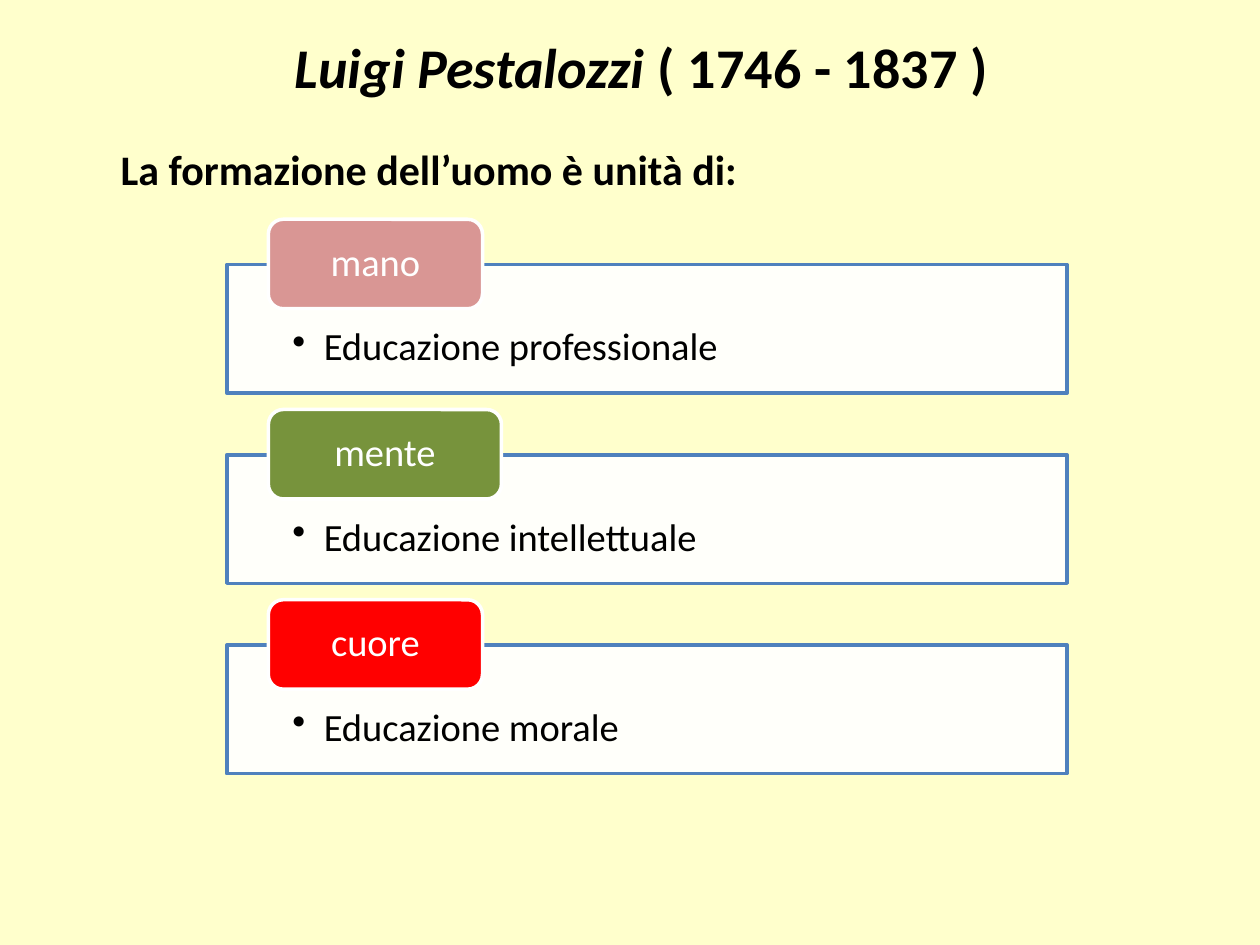
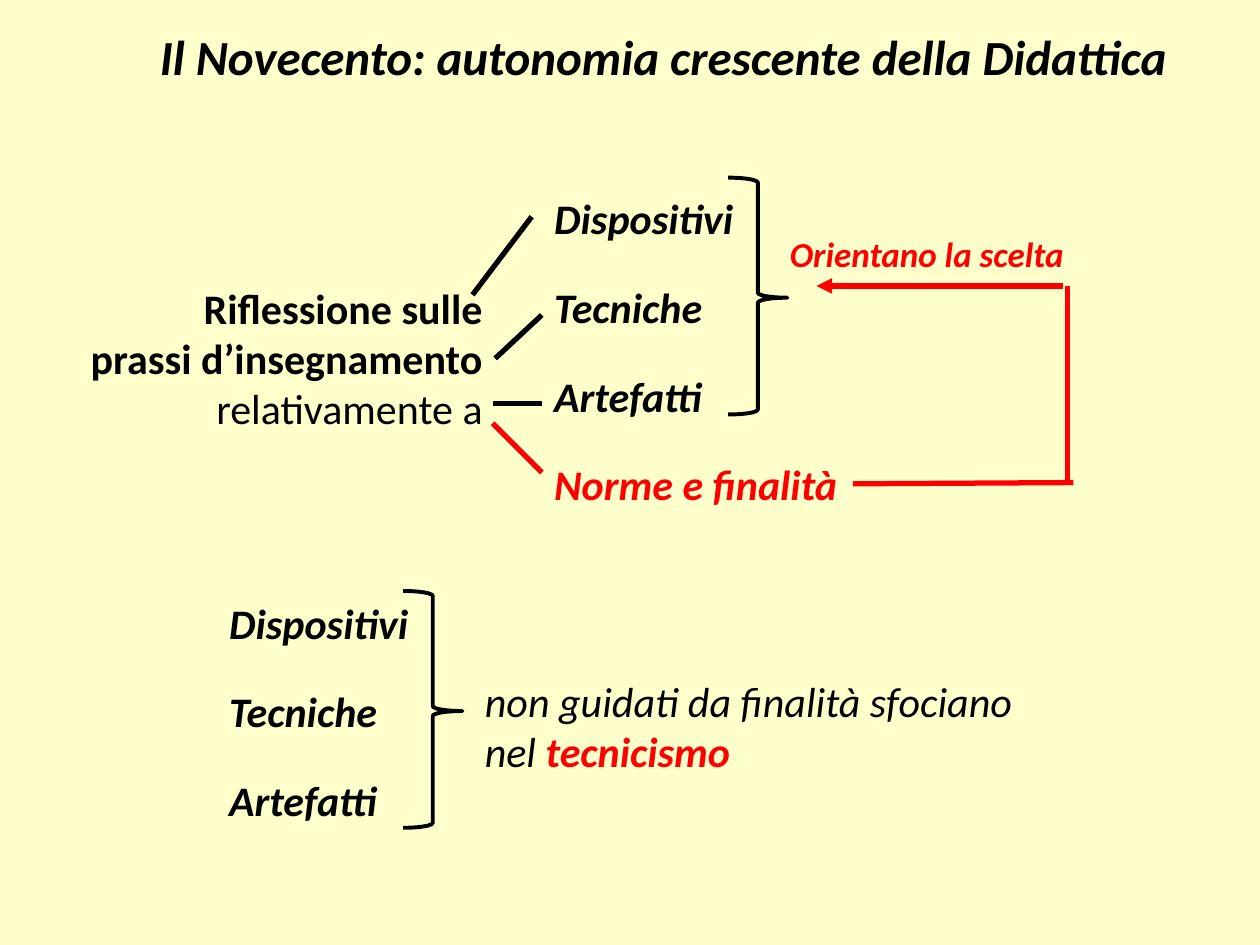
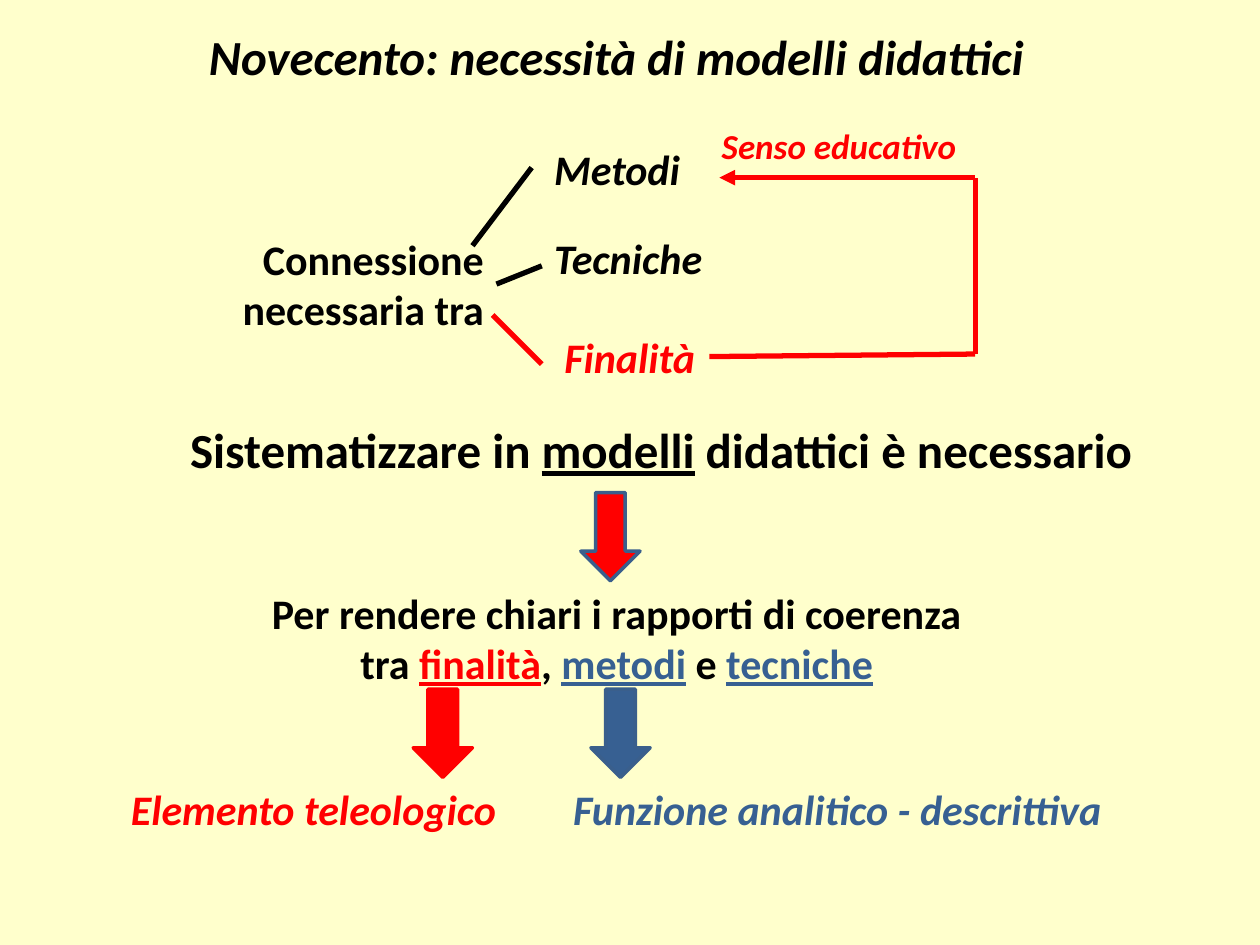
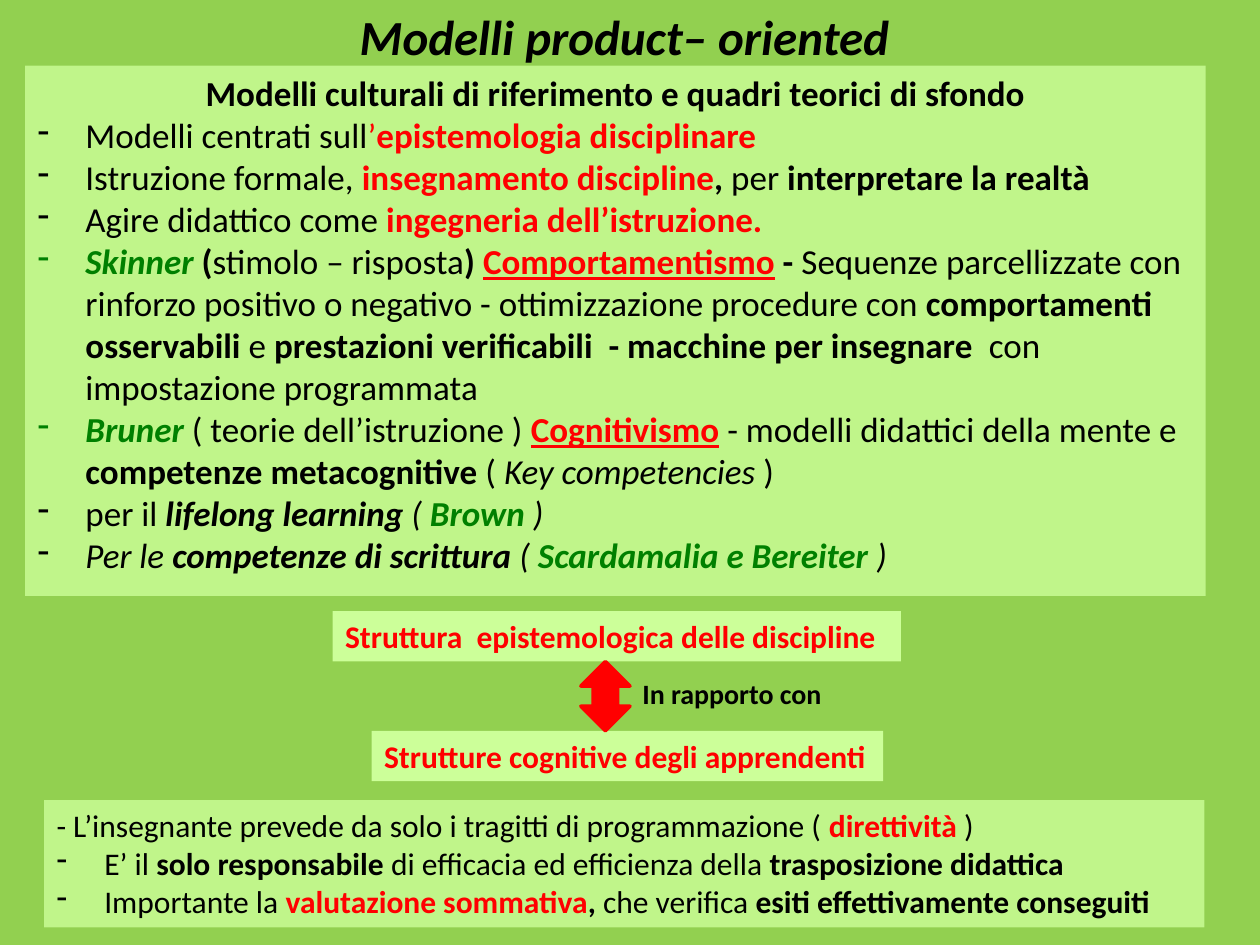
"""Build four slides on the history of didactics and its product-oriented models."""

from dataclasses import dataclass
from typing import NamedTuple

from lxml.etree import SubElement
from pptx import Presentation
from pptx.dml.color import RGBColor
from pptx.enum.shapes import MSO_CONNECTOR, MSO_SHAPE
from pptx.enum.text import MSO_ANCHOR, MSO_AUTO_SIZE, PP_ALIGN
from pptx.oxml.ns import qn
from pptx.shapes.autoshape import Shape
from pptx.shapes.connector import Connector
from pptx.slide import Slide
from pptx.util import Emu, Inches, Pt

SLIDE_WIDTH, SLIDE_HEIGHT = Inches(10), Inches(7.5)
COLUMNS, ROWS = 100, 75
FONT = "Calibri"
RIGHT_SIDE = 3

CREAM = RGBColor(0xFF, 0xFF, 0xCC)
LEAF = RGBColor(0x92, 0xD0, 0x50)
LIME = RGBColor(0xCC, 0xFF, 0x99)
BLACK = RGBColor(0x00, 0x00, 0x00)
WHITE = RGBColor(0xFF, 0xFF, 0xFF)
RED = RGBColor(0xFF, 0x00, 0x00)
GREEN = RGBColor(0x00, 0x80, 0x00)
BLUE = RGBColor(0x37, 0x60, 0x92)
DARK_BLUE = RGBColor(0x3A, 0x5F, 0x8C)
CARD_BLUE = RGBColor(0x4F, 0x81, 0xBD)
ROSE = RGBColor(0xD9, 0x96, 0x94)
OLIVE = RGBColor(0x77, 0x93, 0x3C)


class Box(NamedTuple):
    left: float
    top: float
    width: float
    height: float


class Point(NamedTuple):
    column: float
    row: float


class Run(NamedTuple):
    text: str
    style: str | None = None
    color: RGBColor | None = None


class TextLine(NamedTuple):
    runs: tuple[Run, ...]
    bullet: str


@dataclass(frozen=True)
class Card:
    name: str
    detail: str
    color: RGBColor
    tab_width: float


@dataclass(frozen=True)
class Label:
    text: str
    box: Box
    size: int = 24
    style: str = "bi"
    color: RGBColor = BLACK


@dataclass(frozen=True)
class Stroke:
    start: Point
    end: Point
    color: RGBColor = RED
    arrow: bool = False


@dataclass(frozen=True)
class BlockArrow:
    box: Box
    fill: RGBColor
    outline: RGBColor


def column(count: float) -> Emu:
    return Emu(round(SLIDE_WIDTH * count / COLUMNS))


def row(count: float) -> Emu:
    return Emu(round(SLIDE_HEIGHT * count / ROWS))


def place(box: Box) -> tuple[Emu, Emu, Emu, Emu]:
    return column(box.left), row(box.top), column(box.width), row(box.height)


def line(*runs: Run | str, bullet: str = "") -> TextLine:
    return TextLine(tuple(Run(run) if isinstance(run, str) else run for run in runs), bullet)


def dash(*runs: Run | str) -> TextLine:
    return line(*runs, bullet="-")


def write_text(shape: Shape, *lines: TextLine, size: float = 24, style: str = "",
               color: RGBColor = BLACK, align: PP_ALIGN = PP_ALIGN.LEFT,
               anchor: MSO_ANCHOR = MSO_ANCHOR.TOP, wrap: bool = False,
               fit: bool = True, insets: Box = Box(1, 0.5, 1, 0.5),
               hang: float = 0, spacing: float | None = None) -> None:
    frame = shape.text_frame
    frame.word_wrap = wrap
    frame.auto_size = MSO_AUTO_SIZE.SHAPE_TO_FIT_TEXT if fit else MSO_AUTO_SIZE.NONE
    frame.vertical_anchor = anchor
    frame.margin_left, frame.margin_top, frame.margin_right, frame.margin_bottom = place(insets)
    for index, text_line in enumerate(lines):
        paragraph = frame.add_paragraph() if index else frame.paragraphs[0]
        paragraph.alignment = align
        paragraph.line_spacing = spacing
        if hang:
            paragraph.level = 1
            properties = paragraph._p.get_or_add_pPr()
            properties.set("marL", str(column(hang)))
            properties.set("indent", str(-column(hang)))
            if text_line.bullet:
                SubElement(properties, qn("a:buChar"), char=text_line.bullet)
            else:
                SubElement(properties, qn("a:buNone"))
        for part in text_line.runs:
            letters = style if part.style is None else part.style
            run = paragraph.add_run()
            run.text = part.text
            font = run.font
            font.name, font.size = FONT, Pt(size)
            font.bold, font.italic, font.underline = (letter in letters for letter in "biu")
            font.color.rgb = part.color or color


def add_text(slide: Slide, box: Box, *lines: TextLine, **text_format) -> Shape:
    shape = slide.shapes.add_textbox(*place(box))
    write_text(shape, *lines, **text_format)
    return shape


def add_label(slide: Slide, label: Label) -> Shape:
    return add_text(slide, label.box, line(label.text),
                    size=label.size, style=label.style, color=label.color)


def add_block(slide: Slide, kind: MSO_SHAPE, box: Box, fill: RGBColor | None = None,
              outline: RGBColor | None = None, weight: float = 2, opacity: int = 100) -> Shape:
    shape = slide.shapes.add_shape(kind, *place(box))
    shape.shadow.inherit = False
    if fill is None:
        shape.fill.background()
    else:
        shape.fill.solid()
        shape.fill.fore_color.rgb = fill
    if opacity < 100:
        color = shape.element.spPr.find(f"{qn('a:solidFill')}/{qn('a:srgbClr')}")
        SubElement(color, qn("a:alpha"), val=str(opacity * 1000))
    if outline is None:
        shape.line.fill.background()
    else:
        shape.line.color.rgb = outline
        shape.line.width = Pt(weight)
    return shape


def add_panel(slide: Slide, box: Box, *lines: TextLine, opacity: int = 100, **text_format) -> Shape:
    panel = add_block(slide, MSO_SHAPE.RECTANGLE, box, LIME, opacity=opacity)
    write_text(panel, *lines, **text_format)
    return panel


def add_stroke(slide: Slide, stroke: Stroke, source: Shape | None = None) -> Connector:
    connector = slide.shapes.add_connector(
        MSO_CONNECTOR.STRAIGHT, column(stroke.start.column), row(stroke.start.row),
        column(stroke.end.column), row(stroke.end.row))
    connector.line.color.rgb = stroke.color
    connector.line.width = Pt(3)
    if stroke.arrow:
        SubElement(connector.get_or_add_ln(), qn("a:tailEnd"), type="triangle")
    SubElement(connector.element.spPr, qn("a:effectLst"))
    if source is not None:
        connector.begin_connect(source, RIGHT_SIDE)
    return connector


def add_brace(slide: Slide, left: float, top: float) -> None:
    brace = add_block(slide, MSO_SHAPE.RIGHT_BRACE, Box(left, top, 4.7, 18.8),
                      outline=BLACK, weight=2.25)
    brace.adjustments[0], brace.adjustments[1] = 0.083, 0.507


def add_means(slide: Slide, left: float, top: float, brace_top: float) -> None:
    for index, (name, width) in enumerate(
            (("Dispositivi", 16.5), ("Tecniche", 14), ("Artefatti", 14))):
        add_label(slide, Label(name, Box(left, top + 7.05 * index, width, 5)))
    add_brace(slide, left + 14.8, brace_top)


def new_slide(presentation: Presentation, background: RGBColor) -> Slide:
    slide = presentation.slides.add_slide(presentation.slide_layouts[6])
    slide.background.fill.solid()
    slide.background.fill.fore_color.rgb = background
    return slide


def add_title(slide: Slide, box: Box, *runs: Run | str, size: float = 28, **text_format) -> None:
    add_text(slide, box, line(*runs), size=size, style="bi", **text_format)


def draw_pestalozzi(presentation: Presentation) -> None:
    slide = new_slide(presentation, CREAM)
    add_title(slide, Box(22.4, 2.1, 57.2, 6.4),
              "Luigi Pestalozzi ", Run("( 1746 - 1837 )", "b"), size=32)
    add_label(slide, Label("La formazione dell’uomo è unità di:",
                           Box(8.6, 10.9, 51.4, 5), style="b"))
    cards = (
        Card("mano", "Educazione professionale", ROSE, 17),
        Card("mente", "Educazione intellettuale", OLIVE, 18.5),
        Card("cuore", "Educazione morale", RED, 17),
    )
    for index, card in enumerate(cards):
        top = 21 + 15.1 * index
        panel = add_block(slide, MSO_SHAPE.RECTANGLE, Box(18, top, 66.7, 10.2),
                          WHITE, CARD_BLUE, opacity=90)
        write_text(panel, line(card.detail, bullet="•"), size=22, wrap=True, fit=False,
                   insets=Box(5.2, 5, 5.2, 1.7), hang=2.5, spacing=0.9)
        tab = add_block(slide, MSO_SHAPE.ROUNDED_RECTANGLE,
                        Box(21.3, top - 3.6, card.tab_width, 7.1), card.color, WHITE)
        write_text(tab, line(card.name), size=22, color=WHITE, align=PP_ALIGN.CENTER,
                   anchor=MSO_ANCHOR.MIDDLE, wrap=True, fit=False,
                   insets=Box(1.8, 0, 1.8, 0), spacing=0.9)


def draw_autonomy(presentation: Presentation) -> None:
    slide = new_slide(presentation, CREAM)
    add_title(slide, Box(11.7, 1.6, 83, 5.7), "Il Novecento: autonomia crescente della Didattica")
    reflection = add_text(
        slide, Box(5.9, 21.9, 33.4, 13.1), line("Riflessione sulle"),
        line("prassi d’insegnamento"), line(Run("relativamente a", "")),
        style="b", align=PP_ALIGN.RIGHT)
    add_means(slide, 43, 14.8, 14.1)
    aims = add_label(slide, Label("Norme e finalità", Box(43, 35.9, 24.7, 5), color=RED))
    add_label(slide, Label("Orientano la scelta", Box(61.7, 18, 23.9, 4.4), size=20, color=RED))
    for stroke, source in (
        (Stroke(Point(43, 32), Point(39.1, 32), BLACK), None),
        (Stroke(Point(43, 37.5), Point(39.1, 33.6)), None),
        (Stroke(Point(39.3, 28.4), Point(43, 25), BLACK), reflection),
        (Stroke(Point(37.5, 23.4), Point(42.2, 17.2), BLACK), None),
        (Stroke(Point(67.7, 38.5), Point(85.2, 38.3)), aims),
        (Stroke(Point(84.7, 38.3), Point(84.7, 22.7)), None),
        (Stroke(Point(84.4, 22.7), Point(64.8, 22.7), arrow=True), None),
    ):
        add_stroke(slide, stroke, source)
    add_means(slide, 17.2, 46.9, 46.9)
    add_text(slide, Box(37.5, 53.1, 45.4, 9.1), line("non guidati da finalità sfociano"),
             line("nel ", Run("tecnicismo", "bi", RED)), style="i")


def draw_need_for_models(presentation: Presentation) -> None:
    slide = new_slide(presentation, CREAM)
    add_title(slide, Box(15.6, 1.6, 67.5, 5.7), "Novecento: necessità di modelli didattici")
    link = add_text(slide, Box(18, 18, 21.4, 9.1), line("Connessione"),
                    line("necessaria tra"), style="b", align=PP_ALIGN.RIGHT)
    aims = add_label(slide, Label("Finalità", Box(43.8, 25.8, 12.5, 5), color=RED))
    for label in (
        Label("Tecniche", Box(43, 18, 14, 5)),
        Label("Metodi", Box(43, 10.9, 12.1, 5)),
        Label("Senso educativo", Box(56.3, 9.4, 20.7, 4.4), size=20, color=RED),
        Label("Elemento teleologico", Box(9.4, 61.7, 31.2, 5), color=RED),
        Label("Funzione analitico - descrittiva", Box(44.5, 61.7, 44.4, 5), color=BLUE),
    ):
        add_label(slide, label)
    for stroke, source in (
        (Stroke(Point(43, 28.9), Point(39.1, 25)), None),
        (Stroke(Point(39.4, 22.5), Point(43, 21.1), BLACK), link),
        (Stroke(Point(37.5, 19.5), Point(42.2, 13.3), BLACK), None),
        (Stroke(Point(56.3, 28.3), Point(77.4, 28.1)), aims),
        (Stroke(Point(77.4, 28.1), Point(77.4, 14.1)), None),
        (Stroke(Point(77.4, 14.1), Point(57.1, 14.1), arrow=True), None),
    ):
        add_stroke(slide, stroke, source)
    add_text(slide, Box(14.1, 32.8, 77.8, 5.7),
             line("Sistematizzare in ", Run("modelli", "bu"), " didattici è necessario"),
             size=28, style="b")
    add_text(slide, Box(20.3, 46.1, 57.3, 9.1), line("Per rendere chiari i rapporti di coerenza"),
             line("tra ", Run("finalità", "bu", RED), ", ", Run("metodi", "bu", BLUE),
                  " e ", Run("tecniche", "bu", BLUE)),
             style="b", align=PP_ALIGN.CENTER)
    for arrow in (
        BlockArrow(Box(46.1, 39.1, 4.7, 7), RED, DARK_BLUE),
        BlockArrow(Box(32.8, 54.7, 4.7, 7), RED, RED),
        BlockArrow(Box(46.9, 54.7, 4.7, 7), BLUE, DARK_BLUE),
    ):
        add_block(slide, MSO_SHAPE.DOWN_ARROW, arrow.box, arrow.fill, arrow.outline)


def draw_product_models(presentation: Presentation) -> None:
    slide = new_slide(presentation, LEAF)
    add_title(slide, Box(0, 0, 100, 5.7), "Modelli product– oriented ",
              align=PP_ALIGN.CENTER, wrap=True)
    theories = add_panel(
        slide, Box(2, 5.2, 93.7, 42.1),
        line(Run("Modelli culturali di riferimento e quadri teorici di sfondo", "b")),
        dash("Modelli centrati sull", Run("’", "", RED),
             Run("epistemologia disciplinare", "b", RED)),
        dash("Istruzione formale, ", Run("insegnamento discipline", "b", RED),
             Run(", ", "b"), "per ", Run("interpretare la realtà", "b")),
        dash("Agire didattico come ", Run("ingegneria dell’istruzione.", "b", RED)),
        dash(Run("Skinner", "bi", GREEN), Run(" (", "b"), "stimolo – risposta", Run(") ", "b"),
             Run("Comportamentismo", "bu", RED), Run(" - ", "b"),
             "Sequenze parcellizzate con rinforzo positivo o negativo - "
             "ottimizzazione procedure con ",
             Run("comportamenti osservabili ", "b"), "e ",
             Run("prestazioni verificabili  - macchine per insegnare ", "b"),
             " con impostazione programmata"),
        dash(Run("Bruner ", "bi", GREEN), "( teorie dell’istruzione ) ",
             Run("Cognitivismo", "bu", RED), " - modelli didattici della mente e ",
             Run("competenze metacognitive ", "b"), "( ", Run("Key competencies ", "i"), ")"),
        dash("per il ", Run("lifelong learning ", "bi"), Run("( ", "i"),
             Run("Brown", "bi", GREEN), Run(" )", "i")),
        dash(Run("Per le ", "i"), Run("competenze di scrittura", "bi"), Run(" ( ", "i"),
             Run("Scardamalia e Bereiter ", "bi", GREEN), Run(")", "i")),
        opacity=80, size=20, wrap=True, hang=3.8)
    theories.text_frame.paragraphs[0].alignment = PP_ALIGN.CENTER
    for text, box in (
        ("Struttura  epistemologica delle discipline", Box(26.4, 48.5, 45.1, 4)),
        ("Strutture cognitive degli apprendenti", Box(29.5, 58, 40.6, 4)),
    ):
        add_panel(slide, box, line(text), size=18, style="b", color=RED)
    add_block(slide, MSO_SHAPE.UP_DOWN_ARROW, Box(46.1, 52.5, 3.9, 5.5), RED, RED)
    add_panel(
        slide, Box(3.5, 63.5, 92.1, 10.1),
        line("- L’insegnante prevede da solo i tragitti di programmazione ( ",
             Run("direttività", "b", RED), " )"),
        dash("E’ il ", Run("solo responsabile ", "b"), "di efficacia ed efficienza della ",
             Run("trasposizione didattica", "b")),
        dash("Importante la ", Run("valutazione sommativa", "b", RED), Run(", ", "b"),
             "che verifica ", Run("esiti effettivamente conseguiti", "b")),
        opacity=80, size=18, wrap=True, hang=3.8)
    add_label(slide, Label("In rapporto con", Box(50, 53.2, 16.5, 3.7), size=16, style="b"))


def main() -> None:
    presentation = Presentation()
    presentation.slide_width, presentation.slide_height = SLIDE_WIDTH, SLIDE_HEIGHT
    for draw in (draw_pestalozzi, draw_autonomy, draw_need_for_models, draw_product_models):
        draw(presentation)
    presentation.save("out.pptx")


if __name__ == "__main__":
    main()
